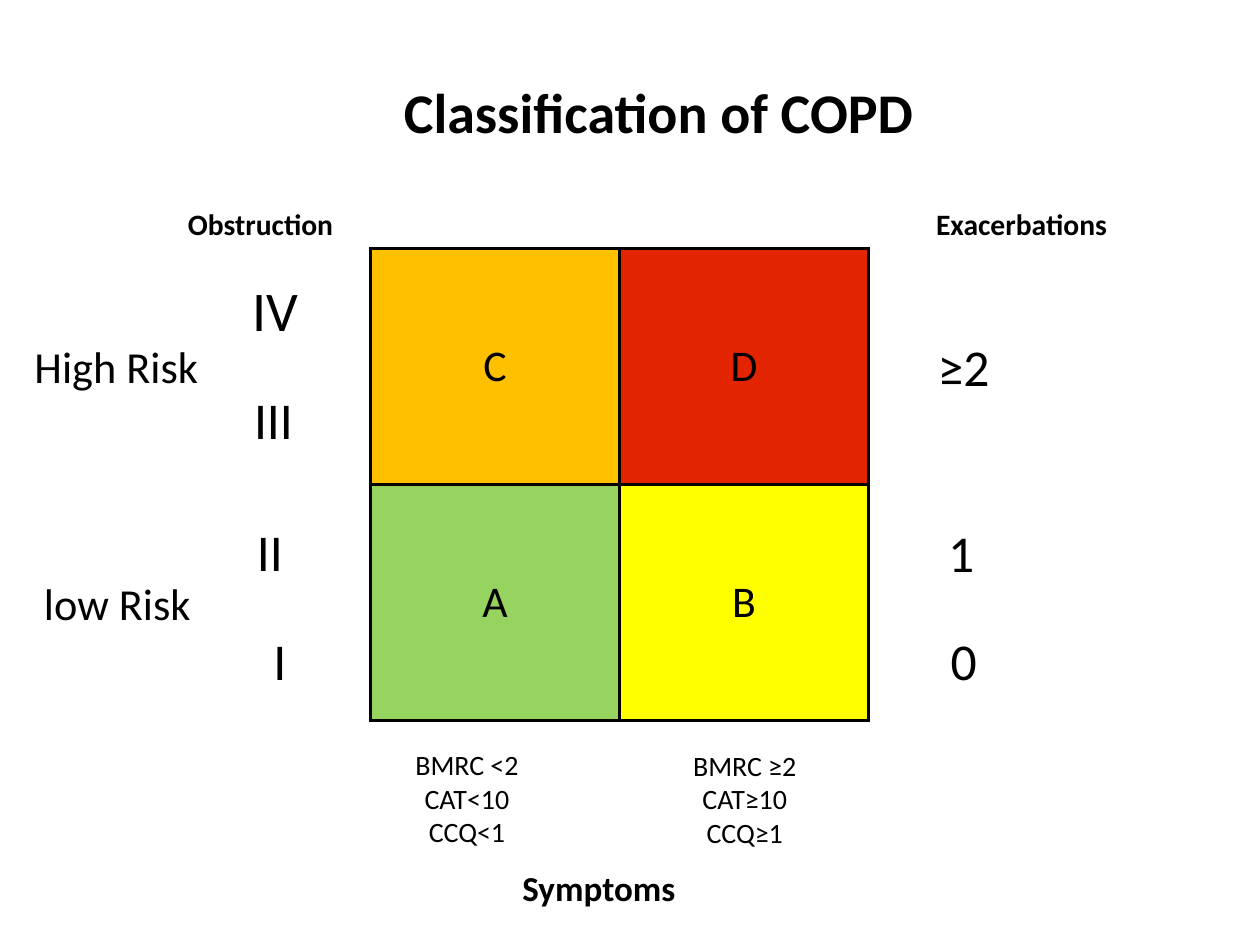
from dataclasses import dataclass

from lxml.etree import SubElement
from pptx import Presentation
from pptx.dml.color import RGBColor
from pptx.enum.text import MSO_ANCHOR as Anchor, MSO_AUTO_SIZE as AutoSize, PP_ALIGN as Align
from pptx.oxml.ns import qn
from pptx.util import Cm, Pt


@dataclass(frozen=True)
class Theme:
    font: str = "Calibri"
    ink: str = "000000"
    orange: str = "FFC000"
    red: str = "E32400"
    green: str = "96D35F"
    yellow: str = "FFFF00"
    title: float = 32
    highest_stage: float = 32
    level: float = 29.5
    risk: float = 25.3
    group: float = 25
    axis: float = 20
    heading: float = 16.9
    score: float = 16
    inset: float = 0.1
    border: float = 2


@dataclass(frozen=True)
class Label:
    text: str
    left: float
    top: float
    width: float
    height: float
    size: float
    bold: bool = False


@dataclass(frozen=True)
class Group:
    name: str
    color: str


THEME = Theme()
TITLE = Label("Classification of COPD", 6.36, 1.53, 13.84, 1.42, THEME.title, True)
SYMPTOMS = Label("Symptoms", 10.26, 17.33, 3.63, 1.12, THEME.axis, True)
LABELS = [
    Label("Obstruction", 3.31, 3.72, 3.89, 1.57, THEME.heading, True),
    Label("Exacerbations", 17.79, 4.06, 5.61, 0.89, THEME.heading, True),
    Label("IV", 4.73, 5.52, 1.63, 1.42, THEME.highest_stage),
    Label("III", 4.73, 7.73, 1.57, 1.42, THEME.level),
    Label("II", 4.73, 10.39, 1.42, 1.42, THEME.level),
    Label("I", 5.25, 12.6, 0.79, 1.42, THEME.level),
    Label("≥2", 18.64, 6.65, 1.57, 1.47, THEME.level),
    Label("1", 19.01, 10.41, 0.74, 1.42, THEME.level),
    Label("0", 19.06, 12.6, 0.74, 1.42, THEME.level),
    Label("High Risk", 0.26, 6.77, 4.17, 1.22, THEME.risk),
    Label("low Risk", 0.46, 11.54, 3.81, 1.22, THEME.risk),
    Label("BMRC <2\nCAT<10\nCCQ<1", 7.46, 14.94, 3.91, 2.29, THEME.score),
    Label("BMRC ≥2\nCAT≥10\nCCQ≥1", 13.58, 14.92, 2.87, 2.36, THEME.score),
]
GROUPS = [
    [Group("C", THEME.orange), Group("D", THEME.red)],
    [Group("A", THEME.green), Group("B", THEME.yellow)],
]


def write_text(frame, text: str, *, size: float, bold: bool = False) -> None:
    frame.text = text
    for paragraph in frame.paragraphs:
        paragraph.alignment = Align.CENTER
        font = paragraph.runs[0].font
        font.name = THEME.font
        font.size = Pt(size)
        font.bold = bold
        font.color.rgb = RGBColor.from_string(THEME.ink)


def set_margins(target) -> None:
    target.margin_left = target.margin_right = Cm(THEME.inset)
    target.margin_top = target.margin_bottom = Cm(THEME.inset)
    target.vertical_anchor = Anchor.MIDDLE


def format_label(shape, label: Label) -> None:
    shape.left, shape.top = Cm(label.left), Cm(label.top)
    shape.width, shape.height = Cm(label.width), Cm(label.height)
    frame = shape.text_frame
    set_margins(frame)
    frame.word_wrap = False
    frame.auto_size = AutoSize.NONE
    write_text(frame, label.text, size=label.size, bold=label.bold)


def add_label(slide, label: Label) -> None:
    width, height = Cm(label.width), Cm(label.height)
    builder = slide.shapes.build_freeform(0, 0)
    builder.add_line_segments([(width, 0), (width, height), (0, height)], close=True)
    shape = builder.convert_to_shape()
    shape.fill.background()
    shape.line.fill.background()
    shape.shadow.inherit = False
    format_label(shape, label)


def add_borders(cell) -> None:
    properties = cell._tc.get_or_add_tcPr()
    for side in ("a:lnL", "a:lnR", "a:lnT", "a:lnB"):
        line = SubElement(properties, qn(side), w=str(Pt(THEME.border)))
        fill = SubElement(line, qn("a:solidFill"))
        SubElement(fill, qn("a:srgbClr"), val=THEME.ink)


def add_group_table(slide, groups: list[list[Group]]) -> None:
    column_width, row_height = Cm(5.02), Cm(4.76)
    rows, columns = len(groups), len(groups[0])
    table = slide.shapes.add_table(
        rows, columns, Cm(7.47), Cm(5.01), column_width * columns, row_height * rows
    ).table
    table.first_row = table.horz_banding = False
    for row, row_groups in enumerate(groups):
        for column, group in enumerate(row_groups):
            cell = table.cell(row, column)
            set_margins(cell)
            write_text(cell.text_frame, group.name, size=THEME.group)
            add_borders(cell)
            cell.fill.solid()
            cell.fill.fore_color.rgb = RGBColor.from_string(group.color)


def main() -> None:
    presentation = Presentation()
    presentation.slide_width, presentation.slide_height = Cm(25.4), Cm(19.05)
    slide = presentation.slides.add_slide(presentation.slide_layouts[5])
    format_label(slide.shapes.title, TITLE)
    add_group_table(slide, GROUPS)
    for label in LABELS:
        add_label(slide, label)
    format_label(slide.shapes.add_textbox(0, 0, 0, 0), SYMPTOMS)
    presentation.save("out.pptx")


if __name__ == "__main__":
    main()
